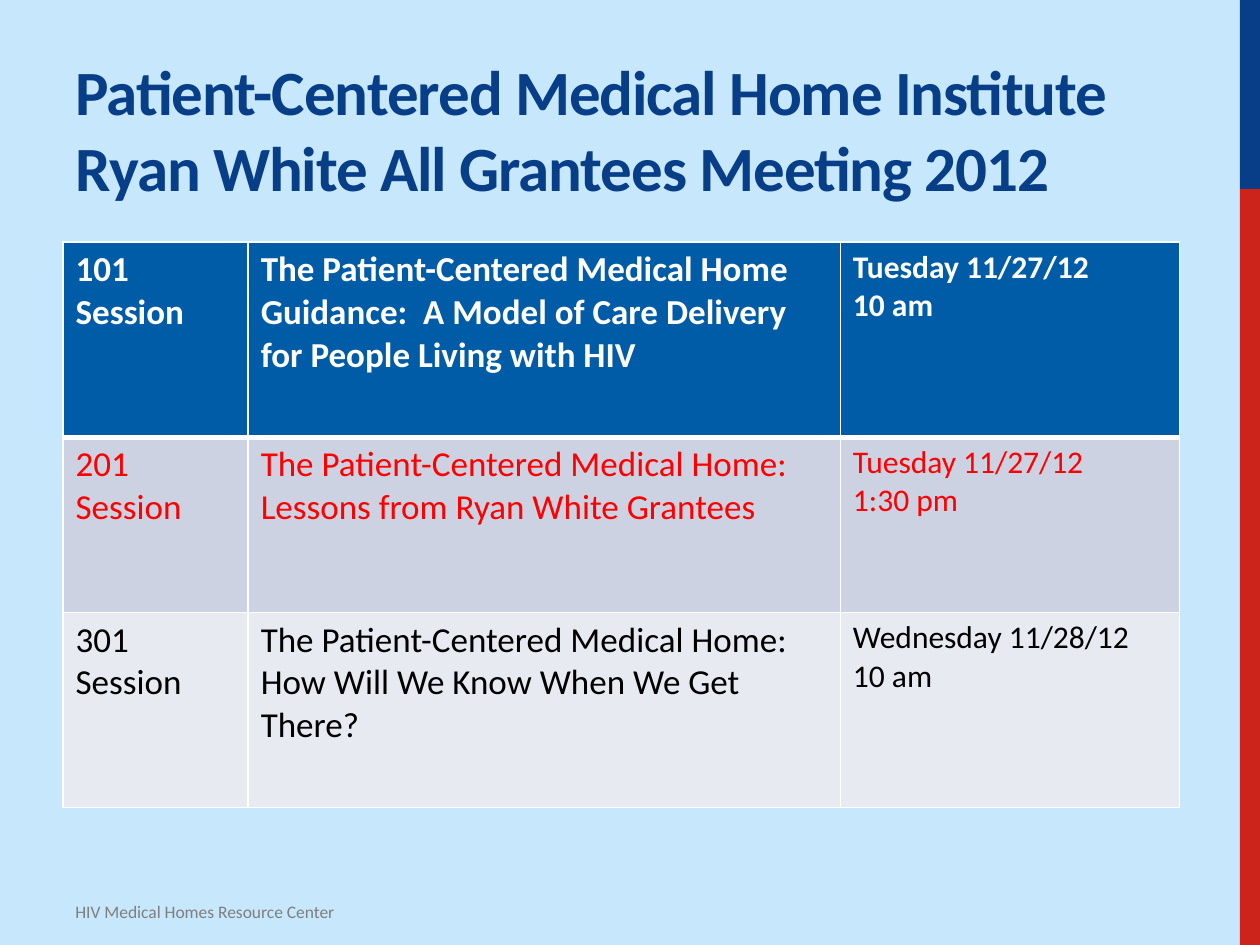
from lxml import etree
from pptx import Presentation
from pptx.dml.color import RGBColor
from pptx.enum.shapes import MSO_SHAPE as Preset
from pptx.enum.text import MSO_ANCHOR as Anchor, PP_ALIGN as Align
from pptx.oxml.ns import qn
from pptx.util import Inches, Pt


def paint(fill, color):
    fill.solid()
    fill.fore_color.rgb = RGBColor.from_string(color)


def write(para, text, color, **style):
    para.alignment = Align.LEFT
    span = para.add_run()
    span.text = text
    for name, value in {"name": "Calibri", **style}.items():
        setattr(span.font, name, value)
    paint(span.font.fill, color)
    return span


deck = Presentation()
deck.slide_width, deck.slide_height = Inches(10), Inches(7.5)
page = deck.slides.add_slide(deck.slide_layouts[5])
paint(page.background.fill, "C6E7FC")

left, content_width = Inches(0.5), Inches(8.87)
bar_left = Inches(9.84)
bar_width = deck.slide_width - bar_left
split = deck.slide_height // 5
for top, height, color in [
    (0, split, "073E87"),
    (split, deck.slide_height - split, "CC241B"),
]:
    bar = page.shapes.add_shape(Preset.RECTANGLE, bar_left, top, bar_width, height)
    bar.shadow.inherit = False
    bar.line.fill.background()
    paint(bar.fill, color)

title = page.shapes.title
title_box = {"left": left, "top": Inches(0.17), "width": content_width, "height": Inches(1.5)}
for name, value in title_box.items():
    setattr(title, name, value)
title.text_frame.vertical_anchor = Anchor.BOTTOM
title.text_frame.word_wrap = True
heading = title.text_frame.paragraphs[0]
lines = ["Patient-Centered Medical Home Institute", "Ryan White All Grantees Meeting 2012"]
for index, line in enumerate(lines):
    if index:
        heading.add_line_break()
    span = write(heading, line, "073E87", size=Pt(36), bold=True)
    span.font._element.set("spc", "-60")

sessions = [
    (
        "101 Session",
        "The Patient-Centered Medical Home Guidance:\u00a0 A Model of Care Delivery for People Living with HIV",
        "Tuesday 11/27/12\n10 am",
    ),
    (
        "201 Session",
        "The Patient-Centered Medical Home: Lessons from Ryan White Grantees",
        "Tuesday 11/27/12\n1:30 pm",
    ),
    (
        "301 Session",
        "The Patient-Centered Medical Home:\nHow Will We Know When We Get There?",
        "Wednesday 11/28/12\n10 am",
    ),
]
row_styles = [("005CA7", "FFFFFF"), ("CCD2E1", "FF0000"), ("E7EAF1", "000000")]
text_sizes = [20, 20, 18]

table = page.shapes.add_table(3, 3, left, Inches(1.92), content_width, Inches(4.49)).table
for column, width in zip(table.columns, [1.47, 4.7, 2.69]):
    column.width = Inches(width)
for row, height in zip(table.rows, [1.55, 1.39, 1.55]):
    row.height = Inches(height)

for row_index, (session, (fill, color)) in enumerate(zip(sessions, row_styles)):
    for column_index, (text, size) in enumerate(zip(session, text_sizes)):
        cell = table.cell(row_index, column_index)
        properties = cell._tc.get_or_add_tcPr()
        for side in "LRTB":
            heavy = (row_index, side) in [(0, "B"), (1, "T")]
            border = etree.SubElement(properties, qn(f"a:ln{side}"), w=str(Pt(3 if heavy else 1)))
            border_fill = etree.SubElement(border, qn("a:solidFill"))
            etree.SubElement(border_fill, qn("a:srgbClr"), val="FFFFFF")
        paint(cell.fill, fill)
        for index, line in enumerate(text.split("\n")):
            frame = cell.text_frame
            para = frame.add_paragraph() if index else frame.paragraphs[0]
            write(para, line, color, size=Pt(size), bold=row_index == 0)

footer = page.shapes.add_textbox(left, Inches(7.1), Inches(3.75), Inches(0.31))
footer.text_frame.word_wrap = True
write(footer.text_frame.paragraphs[0], "HIV Medical Homes Resource Center", "7F7F7F", size=Pt(10))

deck.save("out.pptx")
